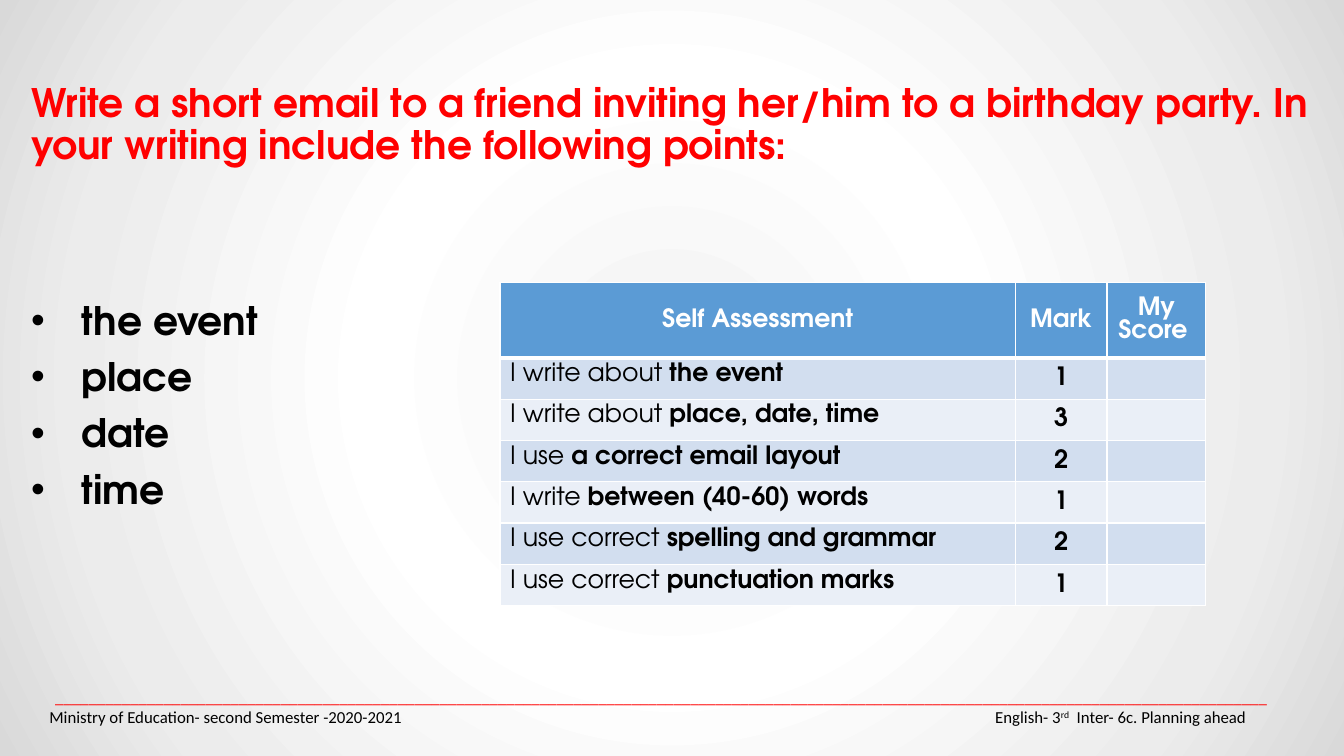
from lxml.etree import SubElement
from pptx import Presentation
from pptx.dml.color import RGBColor
from pptx.enum.text import MSO_ANCHOR as Anchor, PP_ALIGN as Align
from pptx.oxml import parse_xml
from pptx.oxml.ns import nsdecls, qn
from pptx.util import Inches, Pt

RED = RGBColor(0xFF, 0x00, 0x00)
BLACK = RGBColor(0x00, 0x00, 0x00)
WHITE = RGBColor(0xFF, 0xFF, 0xFF)
HEADER_BLUE = RGBColor(0x5B, 0x9B, 0xD5)
BANDS = RGBColor(0xD2, 0xDE, 0xEF), RGBColor(0xEA, 0xEF, 0xF7)
BACKGROUND_STOPS = (
    (0, RGBColor(0xF2, 0xF2, 0xF2)), (39, WHITE),
    (78, RGBColor(0xEC, 0xEC, 0xEC)), (100, RGBColor(0xD9, 0xD9, 0xD9)),
)

DISPLAY = "TeX Gyre Adventor"
TASK = {"name": DISPLAY, "size": Pt(28), "bold": True}
CELL = {"name": DISPLAY, "size": Pt(18), "bold": True}
FOOTER = {"name": "Calibri", "size": Pt(12)}

INSTRUCTION = ("Write a short email to a friend inviting her/him to a birthday party. "
               "In your writing include the following points:")
POINTS = ("the event", "place", "date", "time")
HEADINGS = ("Self Assessment", "Mark", "My Score ")
CRITERIA = (
    ("I write about ", "the event", 1),
    ("I write about ", "place, date, time", 3),
    ("I use ", "a correct email layout", 2),
    ("I write ", "between (40-60) words", 1),
    ("I use correct ", "spelling and grammar", 2),
    ("I use correct ", "punctuation marks", 1),
)


def set_background(slide):
    slide.background.fill.gradient()
    gradient = next(slide.element.iter(qn("a:gradFill")))
    stops = "".join(
        f'<a:gs pos="{position * 1000}"><a:srgbClr val="{color}"/></a:gs>'
        for position, color in BACKGROUND_STOPS)
    new_gradient = parse_xml(
        f'<a:gradFill {nsdecls("a")} rotWithShape="1"><a:gsLst>{stops}</a:gsLst>'
        '<a:path path="circle"><a:fillToRect l="50000" t="50000" r="50000" b="50000"/>'
        '</a:path></a:gradFill>')
    gradient.getparent().replace(gradient, new_gradient)


def add_run(paragraph, text, formats, color=BLACK):
    run = paragraph.add_run()
    run.text = text
    for name, value in formats.items():
        setattr(run.font, name, value)
    run.font.color.rgb = color
    return run


def add_text_frame(slide, left, top, width, height, **formats):
    box = slide.shapes.add_textbox(Inches(left), Inches(top), Inches(width), Inches(height))
    frame = box.text_frame
    frame.word_wrap = True
    for name, value in formats.items():
        setattr(frame, name, value)
    return frame


def add_instruction(slide):
    paragraph = add_text_frame(slide, 0.21, 0.78, 12.94, 1).paragraphs[0]
    paragraph.line_spacing = 0.9
    add_run(paragraph, INSTRUCTION, TASK, RED)


def add_points(slide):
    frame = add_text_frame(slide, 0.21, 2.94, 4, 2.3)
    for index, point in enumerate(POINTS):
        paragraph = frame.add_paragraph() if index else frame.paragraphs[0]
        paragraph.line_spacing = 0.9
        paragraph.space_before = Pt(10 if index else 0)
        properties = paragraph._p.get_or_add_pPr()
        properties.set("marL", str(Inches(0.5)))
        properties.set("indent", str(-Inches(0.5)))
        SubElement(properties, qn("a:buFont"), typeface="Arial")
        SubElement(properties, qn("a:buChar"), char="•")
        add_run(paragraph, point, TASK)


def set_borders(cell, **widths):
    properties = cell._tc.get_or_add_tcPr()
    for side in "LRTB":
        width = widths.get(side, 1)
        properties.append(parse_xml(
            f'<a:ln{side} {nsdecls("a")} w="{Pt(width)}"><a:solidFill>'
            f'<a:srgbClr val="{WHITE}"/></a:solidFill></a:ln{side}>'))


def fill_cell(cell, fill, runs, color=BLACK, centred=True, **borders):
    set_borders(cell, **borders)
    cell.fill.solid()
    cell.fill.fore_color.rgb = fill
    cell.vertical_anchor = Anchor.MIDDLE if centred else Anchor.TOP
    paragraph = cell.text_frame.paragraphs[0]
    paragraph.alignment = Align.CENTER if centred else Align.LEFT
    for text, bold in runs:
        add_run(paragraph, text, {**CELL, "bold": bold}, color)


def add_assessment(slide):
    frame = slide.shapes.add_table(
        len(CRITERIA) + 1, len(HEADINGS), Inches(4.96), Inches(2.8), Inches(7), Inches(3.19))
    table = frame.table
    for column, width in zip(table.columns, (5.11, 0.91, 0.98)):
        column.width = Inches(width)
    for index, row in enumerate(table.rows):
        row.height = Inches(0.41 if index else 0.75)
    for index, heading in enumerate(HEADINGS):
        fill_cell(table.cell(0, index), HEADER_BLUE, [(heading, True)], WHITE, B=3)
    for row, (opening, subject, mark) in enumerate(CRITERIA, 1):
        fill = BANDS[(row - 1) % 2]
        top = 3 if row == 1 else 1
        fill_cell(table.cell(row, 0), fill, [(opening, False), (subject, True)],
                  centred=False, T=top)
        fill_cell(table.cell(row, 1), fill, [(str(mark), True)], T=top)
        fill_cell(table.cell(row, 2), fill, [], T=top)


def add_footer_text(slide, left, top, width, alignment, runs, color=BLACK):
    frame = add_text_frame(slide, left, top, width, 0.24, vertical_anchor=Anchor.MIDDLE,
                           margin_left=0, margin_right=0, margin_top=0, margin_bottom=0)
    paragraph = frame.paragraphs[0]
    paragraph.alignment = alignment
    for text, baseline in runs:
        run = add_run(paragraph, text, FOOTER, color)
        run.font._element.set("baseline", str(baseline * 1000))


def main():
    presentation = Presentation()
    presentation.slide_width = Inches(13.33)
    presentation.slide_height = Inches(7.5)
    slide = presentation.slides.add_slide(presentation.slide_layouts[6])
    set_background(slide)
    add_instruction(slide)
    add_points(slide)
    add_assessment(slide)
    add_footer_text(slide, 0.39, 6.79, 12.35, Align.CENTER, [("_" * 145, 0)], RED)
    add_footer_text(slide, 0.49, 6.99, 5, Align.LEFT,
                    [("Ministry of Education- second Semester -2020-2021", 0)])
    add_footer_text(slide, 7.36, 6.99, 5, Align.RIGHT,
                    [("English- 3", 0), ("rd", 30), ("  Inter- 6c. Planning ahead", 0)])
    presentation.save("out.pptx")


if __name__ == "__main__":
    main()
